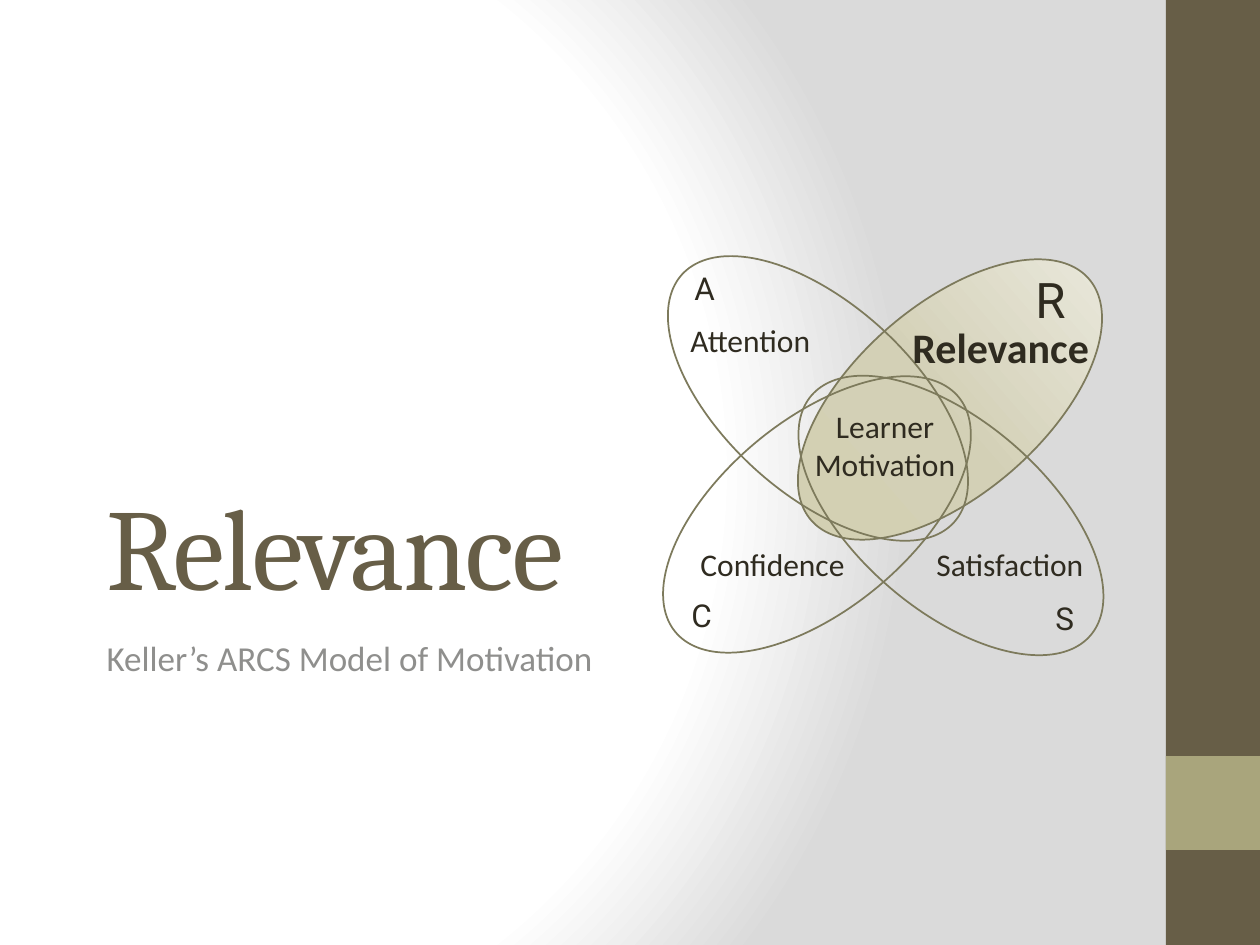
from lxml import etree
from pptx import Presentation
from pptx.dml.color import RGBColor
from pptx.enum.shapes import MSO_SHAPE
from pptx.enum.text import MSO_ANCHOR, MSO_AUTO_SIZE, PP_ALIGN
from pptx.oxml import parse_xml
from pptx.oxml.ns import nsdecls, qn
from pptx.util import Pt

RECTANGLE, OVAL = MSO_SHAPE.RECTANGLE, MSO_SHAPE.OVAL
LEFT, CENTER = PP_ALIGN.LEFT, PP_ALIGN.CENTER
TOP, BOTTOM = MSO_ANCHOR.TOP, MSO_ANCHOR.BOTTOM
GROW = MSO_AUTO_SIZE.SHAPE_TO_FIT_TEXT
NO_RESIZE = MSO_AUTO_SIZE.NONE

EMU_PER_PX = 914400 / 126
COLORS = {
    "brown": "675E47", "olive": "A9A57C", "outline": "7D7A5C",
    "text": "2F2B20", "subtitle": "8F8F8D",
}


def px(*lengths):
    return [round(length * EMU_PER_PX) for length in lengths]


def set_gradient(fill, element, stops, direction):
    fill.gradient()
    gradient = element.find(".//" + qn("a:gradFill"))
    for child in list(gradient):
        gradient.remove(child)
    stop_list = etree.SubElement(gradient, qn("a:gsLst"))
    for position, color in stops:
        stop = etree.SubElement(stop_list, qn("a:gs"), pos=str(position * 1000))
        etree.SubElement(stop, qn("a:srgbClr"), val=color)
    gradient.append(parse_xml(direction))


presentation = Presentation()
presentation.slide_width, presentation.slide_height = px(1260, 945)
slide = presentation.slides.add_slide(presentation.slide_layouts[0])

set_gradient(
    slide.background.fill, slide.element,
    [(0, "FFFFFF"), (75, "FFFFFF"), (100, "DADADA")],
    f'<a:path {nsdecls("a")} path="circle">'
    '<a:fillToRect l="20000" t="50000" r="100000" b="50000"/></a:path>',
)

for top, height, color in [(0, 945, "brown"), (756, 94, "olive")]:
    band = slide.shapes.add_shape(RECTANGLE, *px(1166, top, 94, height))
    band.shadow.inherit = False
    band.fill.solid()
    band.fill.fore_color.rgb = RGBColor.from_string(COLORS[color])
    band.line.fill.background()

headings = [
    (slide.shapes.title, "Relevance", (94, 262, 1040, 358), BOTTOM, 66, "Cambria", "brown"),
    (slide.placeholders[1], "Keller’s ARCS Model of Motivation",
     (94, 630, 891, 147), TOP, 20, "Calibri", "subtitle"),
]
for shape, text, box, anchor, size, font, color in headings:
    shape.left, shape.top, shape.width, shape.height = px(*box)
    frame = shape.text_frame
    frame.text = text
    frame.vertical_anchor = anchor
    frame.auto_size = NO_RESIZE
    paragraph = frame.paragraphs[0]
    paragraph.alignment = LEFT
    paragraph.space_before = Pt(0)
    paragraph.font.size = Pt(size)
    paragraph.font.name = font
    paragraph.font.color.rgb = RGBColor.from_string(COLORS[color])
slide.shapes.title.text_frame.paragraphs[0].runs[0].font._element.set("spc", "-100")

petals = [
    (766, 305, 319, True),
    (634, 304, 42.4, False),
    (767, 421, 40.7, False),
    (633, 420, 320.3, False),
]
for left, top, rotation, highlighted in petals:
    petal = slide.shapes.add_shape(OVAL, *px(left, top, 368, 189))
    petal.rotation = rotation
    petal.shadow.inherit = False
    if highlighted:
        set_gradient(
            petal.fill, petal.element,
            [(0, "D2CFB1"), (47, "D3D0B6"), (100, "F0EFE7")],
            f'<a:lin {nsdecls("a")} ang="0" scaled="0"/>',
        )
    else:
        petal.fill.background()
    petal.line.color.rgb = RGBColor.from_string(COLORS["outline"])
    petal.line.width = Pt(1)

labels = [
    ("A", (682, 263, 49, 50), 18, "Roboto", False, LEFT),
    ("Attention", (678, 315, 147, 50), 18, "Calibri", False, LEFT),
    ("R", (1023, 263, 59, 72), 28, "Roboto", False, LEFT),
    ("Relevance", (900, 315, 204, 63), 24, "Calibri", True, LEFT),
    ("C", (679, 590, 45, 50), 18, "Roboto", False, LEFT),
    ("Confidence", (688, 539, 171, 50), 18, "Calibri", False, LEFT),
    ("Satisfaction", (924, 539, 174, 50), 18, "Calibri", False, LEFT),
    ("S", (1043, 593, 44, 50), 18, "Roboto", False, LEFT),
    ("Learner\nMotivation", (801, 401, 168, 89), 18, "Calibri", False, CENTER),
]
for text, box, size, font, bold, alignment in labels:
    frame = slide.shapes.add_textbox(*px(*box)).text_frame
    frame.word_wrap = False
    frame.auto_size = GROW
    frame.text = text
    for paragraph in frame.paragraphs:
        paragraph.alignment = alignment
        paragraph.font.size = Pt(size)
        paragraph.font.name = font
        paragraph.font.bold = bold
        paragraph.font.color.rgb = RGBColor.from_string(COLORS["text"])

presentation.save("out.pptx")
